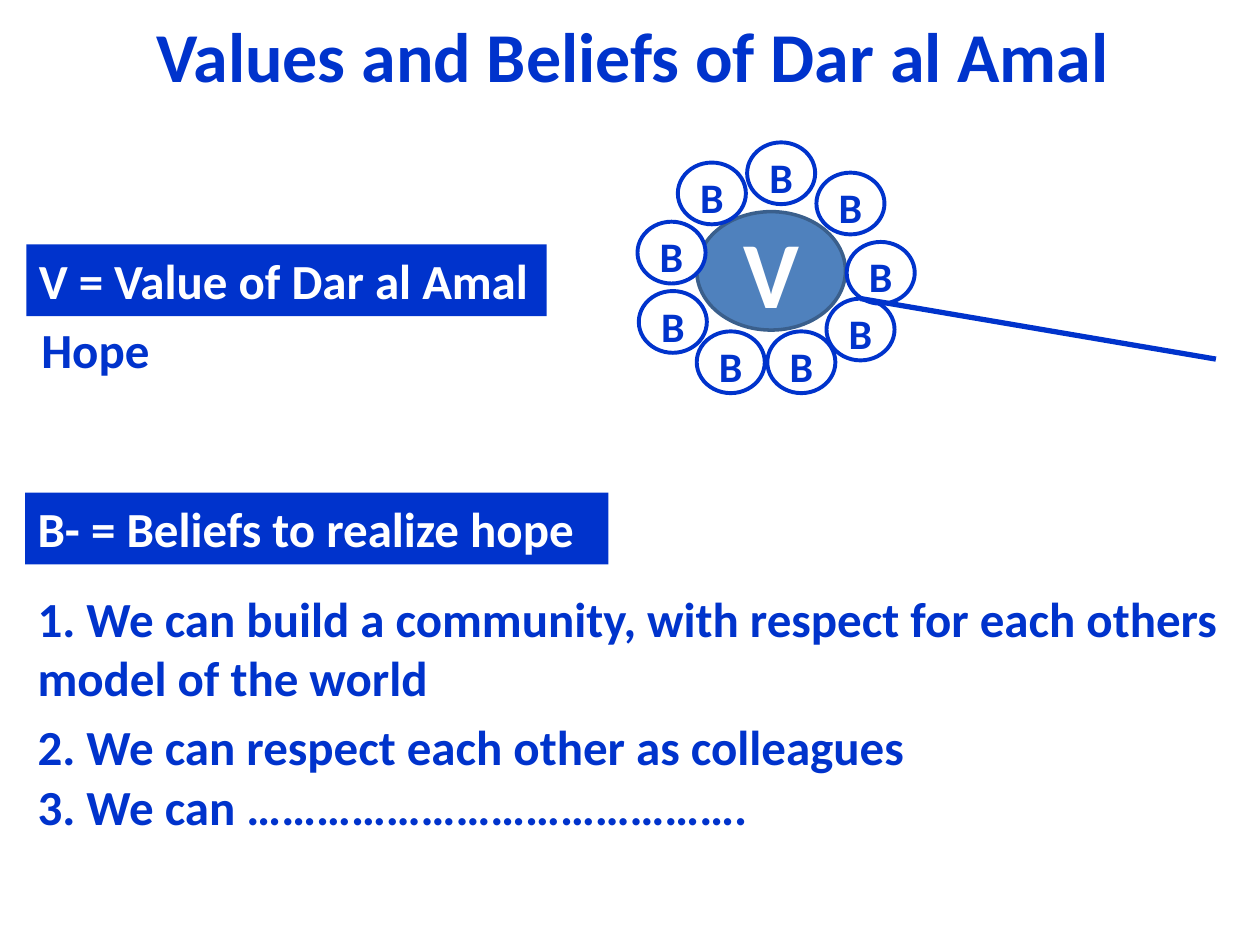
"""Build the slide on the values and beliefs of Dar al Amal."""
from lxml import etree
from pptx import Presentation
from pptx import util as u
from pptx.dml.color import RGBColor
from pptx.enum import shapes, text
from pptx.oxml.ns import qn

COLORS = {"blue": "0033CC", "white": "FFFFFF", "core": "4F81BD", "core_line": "3A5F8C"}
FONT = "Calibri"
MARGIN, BODY_WIDTH, ROW = 0.2, 9.76, 0.57

# (text, left, top, width, height, size, font colour, fill)
TEXTS = [
    ("Hope", 0.23, 2.49, 1.07, ROW, 28, "blue", "white"),
    ("V = Value of Dar al Amal", 0.21, 1.94, 4.13, ROW, 28, "white", "blue"),
    ("B- = Beliefs to realize hope", MARGIN, 3.91, 4.63, ROW, 28, "white", "blue"),
    ("1. We can build a community, with respect for each others model of the world",
     MARGIN, 4.62, BODY_WIDTH, 1.04, 28, "blue", None),
    ("2. We can respect each other as colleagues",
     MARGIN, 5.64, BODY_WIDTH, ROW, 28, "blue", None),
    ("Values and Beliefs of Dar al Amal", 1.14, 0.05, 7.85, 0.77, 40, "blue", None),
    ("3. We can …………………………………….", MARGIN, 6.11, BODY_WIDTH, ROW, 28, "blue", None),
]
CORE = (5.53, 1.68, 1.18, 0.94)
PETAL_SIZE = (0.54, 0.49)
PETALS = [(6.56, 2.37), (6.72, 1.92), (6.09, 2.63), (5.53, 2.63), (5.07, 2.31),
          (6.48, 1.37), (5.93, 1.13), (5.38, 1.29), (5.06, 1.76)]
STEM = (6.83, 2.37, 9.65, 2.85)


def inches(values):
    return [u.Inches(value) for value in values]


def rgb(name):
    return RGBColor.from_string(COLORS[name])


def write(shape, words, size, color, align):
    frame = shape.text_frame
    frame.text = words
    frame.word_wrap = True
    paragraph = frame.paragraphs[0]
    paragraph.alignment = align
    font = paragraph.runs[0].font
    font.name, font.size, font.bold = FONT, u.Pt(size), True
    font.color.rgb = rgb(color)
    return frame


def add_shape(slide, preset, box, fill, line=None, line_width=0):
    shape = slide.shapes.add_shape(preset, *inches(box))
    shape.shadow.inherit = False
    shape.fill.solid()
    shape.fill.fore_color.rgb = rgb(fill)
    if line:
        shape.line.color.rgb = rgb(line)
        shape.line.width = u.Pt(line_width)
    else:
        shape.line.fill.background()
    return shape


def add_flower(slide):
    oval, center = shapes.MSO_SHAPE.OVAL, text.PP_ALIGN.CENTER
    core = add_shape(slide, oval, CORE, "core", "core_line", 2)
    write(core, "V", 54, "white", center).vertical_anchor = text.MSO_ANCHOR.MIDDLE
    for position in PETALS:
        petal = add_shape(slide, oval, position + PETAL_SIZE, "white", "blue", 2.25)
        frame = write(petal, "B", 24, "blue", center)
        frame.vertical_anchor = text.MSO_ANCHOR.TOP
        frame.margin_left = frame.margin_right = frame.margin_top = frame.margin_bottom = 0
        frame.paragraphs[0].space_after = u.Pt(10)
    stem = slide.shapes.add_connector(shapes.MSO_CONNECTOR.STRAIGHT, *inches(STEM))
    stem.line.color.rgb = rgb("blue")
    stem.line.width = u.Pt(3)
    etree.SubElement(stem.element.spPr, qn("a:effectLst"))


def add_text(slide, words, left, top, width, height, size, color, fill):
    box = (left, top, width, height)
    if fill:
        shape = add_shape(slide, shapes.MSO_SHAPE.RECTANGLE, box, fill)
    else:
        shape = slide.shapes.add_textbox(*inches(box))
    frame = write(shape, words, size, color, text.PP_ALIGN.LEFT)
    frame.vertical_anchor = text.MSO_ANCHOR.TOP
    frame.margin_right = 0


def main():
    presentation = Presentation()
    presentation.slide_width, presentation.slide_height = inches((10, 7.5))
    slide = presentation.slides.add_slide(presentation.slide_layouts[6])
    add_flower(slide)
    for entry in TEXTS:
        add_text(slide, *entry)
    presentation.save("out.pptx")


if __name__ == "__main__":
    main()
